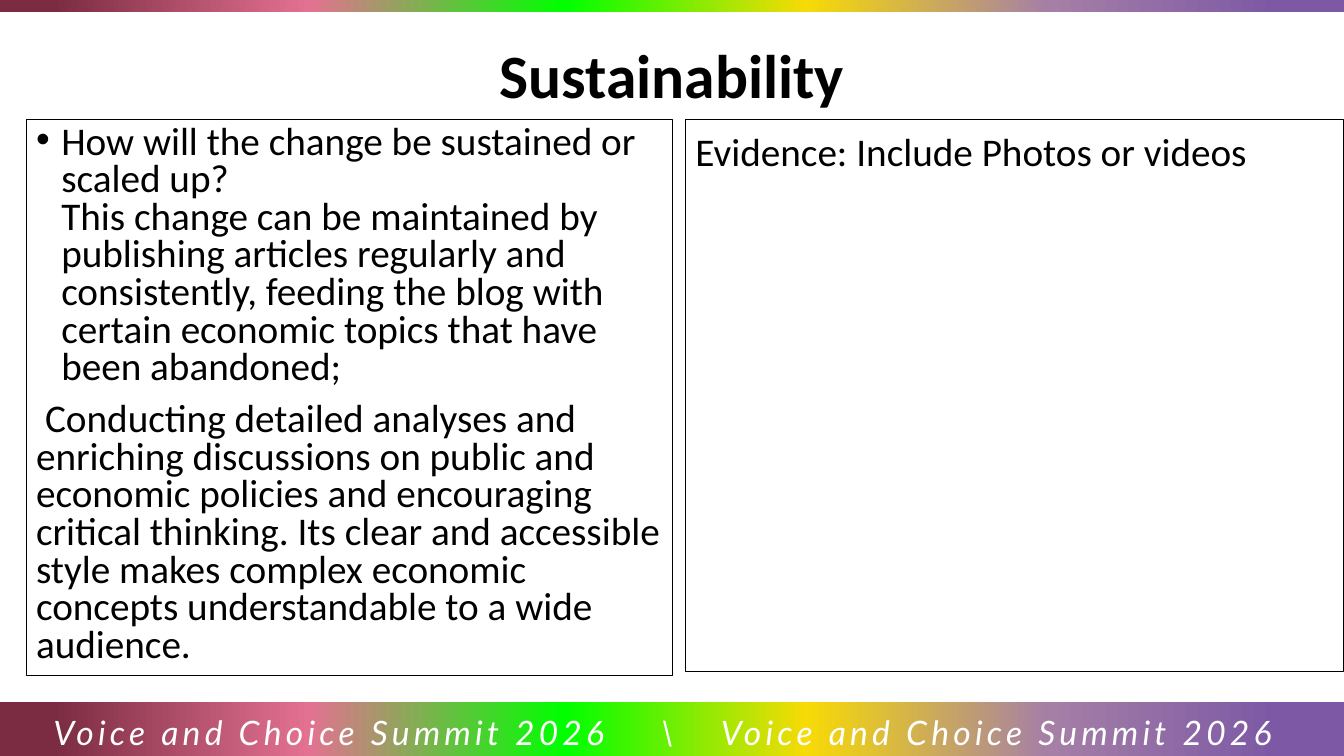
from lxml.etree import SubElement
from pptx import Presentation
from pptx.dml.color import RGBColor
from pptx.enum.shapes import MSO_SHAPE
from pptx.enum.text import MSO_ANCHOR, PP_ALIGN
from pptx.oxml.ns import qn
from pptx.util import Inches, Pt

BLACK = RGBColor(0x00, 0x00, 0x00)
WHITE = RGBColor(0xFF, 0xFF, 0xFF)
PURPLE = RGBColor(0x7D, 0x59, 0xA5)
MAUVE = RGBColor(0xA5, 0x7F, 0xA6)
YELLOW = RGBColor(0xF7, 0xDA, 0x06)
GREEN = RGBColor(0x00, 0xFF, 0x00)
PINK = RGBColor(0xE3, 0x71, 0x91)
MAROON = RGBColor(0x7B, 0x2C, 0x42)
RAINBOW = [(5, PURPLE), (22, MAUVE), (40, YELLOW), (58, GREEN), (77, PINK), (96, MAROON)]

TITLE_FONT = {"name": "Calibri", "size": Pt(44), "bold": True}
BODY_FONT = {"name": "Calibri", "size": Pt(28)}
FOOTER_FONT = {"name": "Lato", "size": Pt(24), "italic": True}


def set_all(target, values):
    for name, value in values.items():
        setattr(target, name, value)


class SummitSlide:
    """One slide in the summit style; areas are percentages of the slide size."""

    def __init__(self, presentation):
        self.width = presentation.slide_width
        self.height = presentation.slide_height
        self.slide = presentation.slides.add_slide(presentation.slide_layouts[5])

    def area(self, left, top, width, height):
        return [round(share * size / 100) for share, size in
                zip((left, top, width, height), (self.width, self.height) * 2)]

    def rectangle(self, area):
        shape = self.slide.shapes.add_shape(MSO_SHAPE.RECTANGLE, *self.area(*area))
        shape.shadow.inherit = False
        return shape

    def band(self, area):
        shape = self.rectangle(area)
        shape.line.fill.background()
        shape.fill.gradient()
        shape.fill.gradient_angle = 180
        stops = next(shape.element.iter(qn("a:gsLst")))
        stops.clear()
        for percent, color in RAINBOW:
            stop = SubElement(stops, qn("a:gs"), pos=str(percent * 1000))
            SubElement(stop, qn("a:srgbClr"), val=str(color))

    def fill_paragraph(self, paragraph, text, font, color=BLACK, **layout):
        paragraph.text = text
        set_all(paragraph, layout)
        for run in paragraph.runs:
            set_all(run.font, font)
            run.font.color.rgb = color

    def title(self, area, text):
        title = self.slide.shapes.title
        set_all(title, dict(zip(("left", "top", "width", "height"), self.area(*area))))
        title.text_frame.vertical_anchor = MSO_ANCHOR.MIDDLE
        self.fill_paragraph(title.text_frame.paragraphs[0], text, TITLE_FONT,
                            alignment=PP_ALIGN.CENTER)

    def panel(self, area, **margins):
        shape = self.rectangle(area)
        shape.fill.background()
        shape.line.color.rgb = BLACK
        shape.line.width = Pt(0.75)
        frame = shape.text_frame
        set_all(frame, {"word_wrap": True, "vertical_anchor": MSO_ANCHOR.TOP, **margins})
        return frame

    def indent(self, paragraph, first_line, left=0, bullet=None):
        properties = paragraph._p.get_or_add_pPr()
        properties.set("marL", str(Inches(left)))
        properties.set("indent", str(Inches(first_line)))
        if bullet:
            SubElement(properties, qn("a:buFont"), typeface="Arial")
            SubElement(properties, qn("a:buChar"), char=bullet)

    def footer(self, area, parts, tab_stops):
        frame = self.slide.shapes.add_textbox(*self.area(*area)).text_frame
        set_all(frame, {"word_wrap": True, "margin_left": Inches(0.53), "margin_right": 0})
        paragraph = frame.paragraphs[0]
        tabs = SubElement(paragraph._p.get_or_add_pPr(), qn("a:tabLst"))
        for position in tab_stops:
            SubElement(tabs, qn("a:tab"), pos=str(Inches(position)), algn="l")
        self.fill_paragraph(paragraph, "\t".join(parts), FOOTER_FONT, WHITE, line_spacing=1.07)
        for run in paragraph.runs:
            run._r.get_or_add_rPr().set("spc", "300")


def main():
    presentation = Presentation()
    presentation.slide_width = Inches(13.33)
    presentation.slide_height = Inches(7.5)
    summit = SummitSlide(presentation)

    # Colour bands and title
    summit.band((0, 0, 100, 1.6))
    summit.band((0, 92.8, 100, 7.6))
    summit.title((0, 3.6, 100, 12.27), "Sustainability")

    # Evidence panel
    evidence = summit.panel((51.01, 15.87, 48.99, 72.93), margin_top=Inches(0.07))
    summit.fill_paragraph(evidence.paragraphs[0], "Evidence: Include Photos or videos",
                          BODY_FONT, alignment=PP_ALIGN.LEFT)

    # Footer
    event = "Voice and Choice Summit 2026"
    summit.footer((0, 93.2, 100, 6.53), (event, "\\", event), (6.02, 6.62))

    # Sustainability answer
    answer = summit.panel((1.95, 15.87, 48.09, 73.47))
    question = answer.paragraphs[0]
    summit.indent(question, -0.25, left=0.25, bullet="•")
    summit.fill_paragraph(
        question,
        "How will the change be sustained or scaled up?\v"
        "This change can be maintained by publishing articles regularly and consistently, "
        "feeding the blog with certain economic topics that have been abandoned;",
        BODY_FONT, alignment=PP_ALIGN.LEFT, line_spacing=0.8)
    analysis = answer.add_paragraph()
    summit.indent(analysis, 0.09)
    summit.fill_paragraph(
        analysis,
        "Conducting detailed analyses and enriching discussions on public and economic "
        "policies and encouraging critical thinking. Its clear and accessible style makes "
        "complex economic concepts understandable to a wide audience.",
        BODY_FONT, alignment=PP_ALIGN.LEFT, line_spacing=0.8, space_before=Pt(10))

    presentation.save("out.pptx")


if __name__ == "__main__":
    main()
